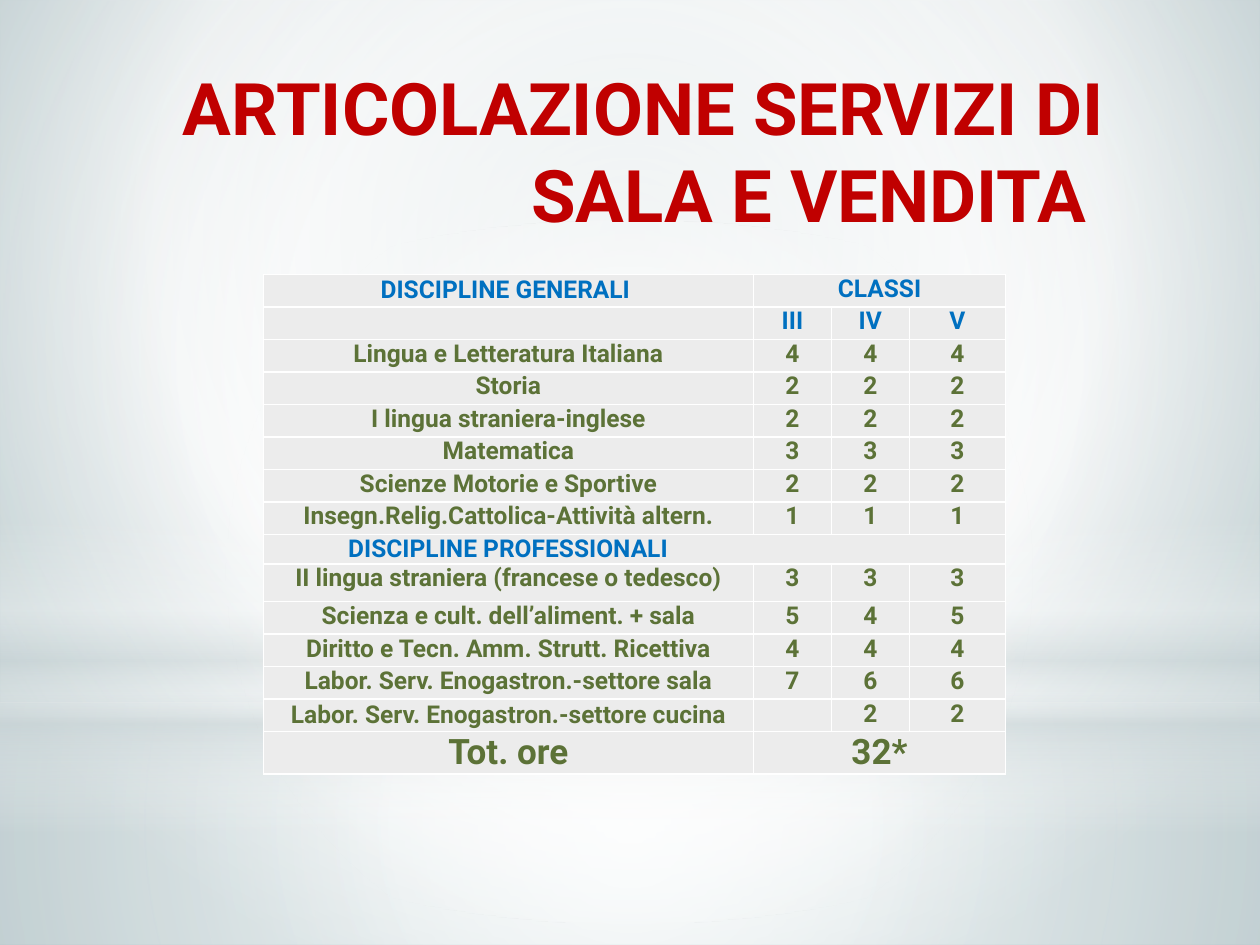
"""Build the timetable slide for the dining-room and sales course."""
import pptx
import pptx.dml.color
import pptx.enum.shapes
import pptx.enum.text
import pptx.oxml
import pptx.oxml.ns
import pptx.util
from pptx.util import Cm

FONT = "Roboto"
RED, BLUE, GREEN, GREY, WHITE = "C00000", "0070C0", "5C7237", "ECECEC", "FFFFFF"
MIST = "CDD7D9"
TITLE = "ARTICOLAZIONE SERVIZI DI SALA E VENDITA "
ROWS = [
    ("DISCIPLINE GENERALI ", "CLASSI"),
    ("", "III", "IV", "V"),
    ("Lingua e Letteratura Italiana", "4", "4", "4"),
    ("Storia", "2", "2", "2"),
    ("I lingua straniera-inglese", "2", "2", "2"),
    ("Matematica", "3", "3", "3"),
    ("Scienze Motorie e Sportive", "2", "2", "2"),
    ("Insegn.Relig.Cattolica-Attività altern.", "1", "1", "1"),
    ("DISCIPLINE PROFESSIONALI",),
    ("II lingua straniera (francese o tedesco)", "3", "3", "3"),
    ("Scienza e cult. dell’aliment. + sala", "5", "4", "5"),
    ("Diritto e Tecn. Amm. Strutt. Ricettiva", "4", "4", "4"),
    ("Labor. Serv. Enogastron.-settore sala", "7", "6", "6"),
    ("Labor. Serv. Enogastron.-settore cucina", "", "2", "2"),
    ("Tot. ore", "32*"),
]
SECTION_ROW, TOTAL_ROW = 8, 14
HEADING_ROWS = (0, 1, SECTION_ROW)
MIDDLE_ROWS = (0, 13)
COLUMN_WIDTHS = [9.88, 1.57, 1.57, 1.57]
ROW_HEIGHT = 0.655
SPECIAL_HEIGHTS = {SECTION_ROW: 0.6, 9: 0.76, TOTAL_ROW: 0.82}

CENTRE = (50, 50, 50, 50)
BACKGROUND = [(0, "C2D0D3", 100), (60, WHITE, 100), (100, "9AB5BA", 100)]
LAYERS = [
    ("RECTANGLE", 14.17, 4.88, CENTRE, [(0, WHITE, 91), (37, WHITE, 76), (100, MIST, 79)]),
    ("RECTANGLE", 0, 14.17, CENTRE, [(0, WHITE, 89), (48, WHITE, 62), (100, MIST, 79)]),
    ("RECTANGLE", 10.46, 6.35, None, [(0, WHITE, 0), (29, WHITE, 30), (45, MIST, 40),
                                      (55, WHITE, 26), (65, MIST, 60), (100, WHITE, 0)]),
    ("OVAL", 4.45, 14.17, CENTRE, [(0, WHITE, 100), (56, WHITE, 0)]),
]


def color(value):
    return pptx.dml.color.RGBColor.from_string(value)


def set_gradient(fill, element, stops, focus):
    fill.solid()
    solid = element.find(".//" + pptx.oxml.ns.qn("a:solidFill"))
    stop_xml = "".join(
        f'<a:gs pos="{position * 1000}"><a:srgbClr val="{value}">'
        f'<a:alpha val="{opacity * 1000}"/></a:srgbClr></a:gs>'
        for position, value, opacity in stops)
    direction = '<a:lin ang="5400000" scaled="0"/>'
    if focus:
        sides = " ".join(f'{side}="{inset * 1000}"' for side, inset in zip("ltrb", focus))
        direction = f'<a:path path="circle"><a:fillToRect {sides}/></a:path>'
    gradient = pptx.oxml.parse_xml(
        f'<a:gradFill {pptx.oxml.ns.nsdecls("a")} rotWithShape="1">'
        f"<a:gsLst>{stop_xml}</a:gsLst>{direction}</a:gradFill>")
    solid.getparent().replace(solid, gradient)


def style_paragraph(paragraph, size, value, alignment):
    paragraph.alignment = alignment
    paragraph.font.name = FONT
    paragraph.font.size = pptx.util.Pt(size)
    paragraph.font.bold = True
    paragraph.font.color.rgb = color(value)


def set_borders(cell):
    properties = cell._tc.get_or_add_tcPr()
    for index, side in enumerate("LRTB"):
        properties.insert(index, pptx.oxml.parse_xml(
            f'<a:ln{side} {pptx.oxml.ns.nsdecls("a")} w="12700"><a:solidFill>'
            f'<a:srgbClr val="{WHITE}"/></a:solidFill></a:ln{side}>'))


def add_backdrop(slide, width):
    set_gradient(slide.background.fill, slide.element, BACKGROUND, (20, 10, 20, 60))
    for kind, top, height, focus, stops in LAYERS:
        shape = slide.shapes.add_shape(
            pptx.enum.shapes.MSO_SHAPE[kind], 0, Cm(top), width, Cm(height))
        shape.shadow.inherit = False
        set_gradient(shape.fill, shape.element, stops, focus)
        shape.line.fill.background()


def add_title(slide):
    frame = slide.shapes.add_textbox(Cm(2.29), Cm(1.14), Cm(20.22), Cm(3.8)).text_frame
    frame.word_wrap = True
    frame.text = TITLE
    style_paragraph(frame.paragraphs[0], 41.4, RED, pptx.enum.text.PP_ALIGN.RIGHT)


def fill_cell(cell, text, row_index):
    is_section = row_index == SECTION_ROW
    cell.margin_left = Cm(1.71 if is_section else 0.13)
    cell.margin_right = Cm(0.13)
    cell.margin_top = cell.margin_bottom = 0
    if row_index in MIDDLE_ROWS and text == ROWS[row_index][0]:
        cell.vertical_anchor = pptx.enum.text.MSO_ANCHOR.MIDDLE
    cell.text = text
    alignment = pptx.enum.text.PP_ALIGN.LEFT if is_section else pptx.enum.text.PP_ALIGN.CENTER
    style_paragraph(cell.text_frame.paragraphs[0], 20 if row_index == TOTAL_ROW else 14,
                    BLUE if row_index in HEADING_ROWS else GREEN, alignment)


def add_timetable(slide):
    heights = [SPECIAL_HEIGHTS.get(index, ROW_HEIGHT) for index in range(len(ROWS))]
    table = slide.shapes.add_table(
        len(ROWS), len(COLUMN_WIDTHS), Cm(5.31), Cm(5.53),
        Cm(sum(COLUMN_WIDTHS)), Cm(sum(heights))).table
    for column, width in zip(table.columns, COLUMN_WIDTHS):
        column.width = Cm(width)
    for row_index, (texts, height) in enumerate(zip(ROWS, heights)):
        row = table.rows[row_index]
        row.height = Cm(height)
        for cell in row.cells:
            cell.fill.solid()
            cell.fill.fore_color.rgb = color(GREY)
            set_borders(cell)
        for column_index, text in enumerate(texts):
            fill_cell(table.cell(row_index, column_index), text, row_index)
        if len(texts) < len(COLUMN_WIDTHS):
            table.cell(row_index, len(texts) - 1).merge(
                table.cell(row_index, len(COLUMN_WIDTHS) - 1))


def main():
    presentation = pptx.Presentation()
    presentation.slide_width, presentation.slide_height = Cm(25.4), Cm(19.05)
    slide = presentation.slides.add_slide(presentation.slide_layouts[6])
    add_backdrop(slide, presentation.slide_width)
    add_title(slide)
    add_timetable(slide)
    presentation.save("out.pptx")


if __name__ == "__main__":
    main()
